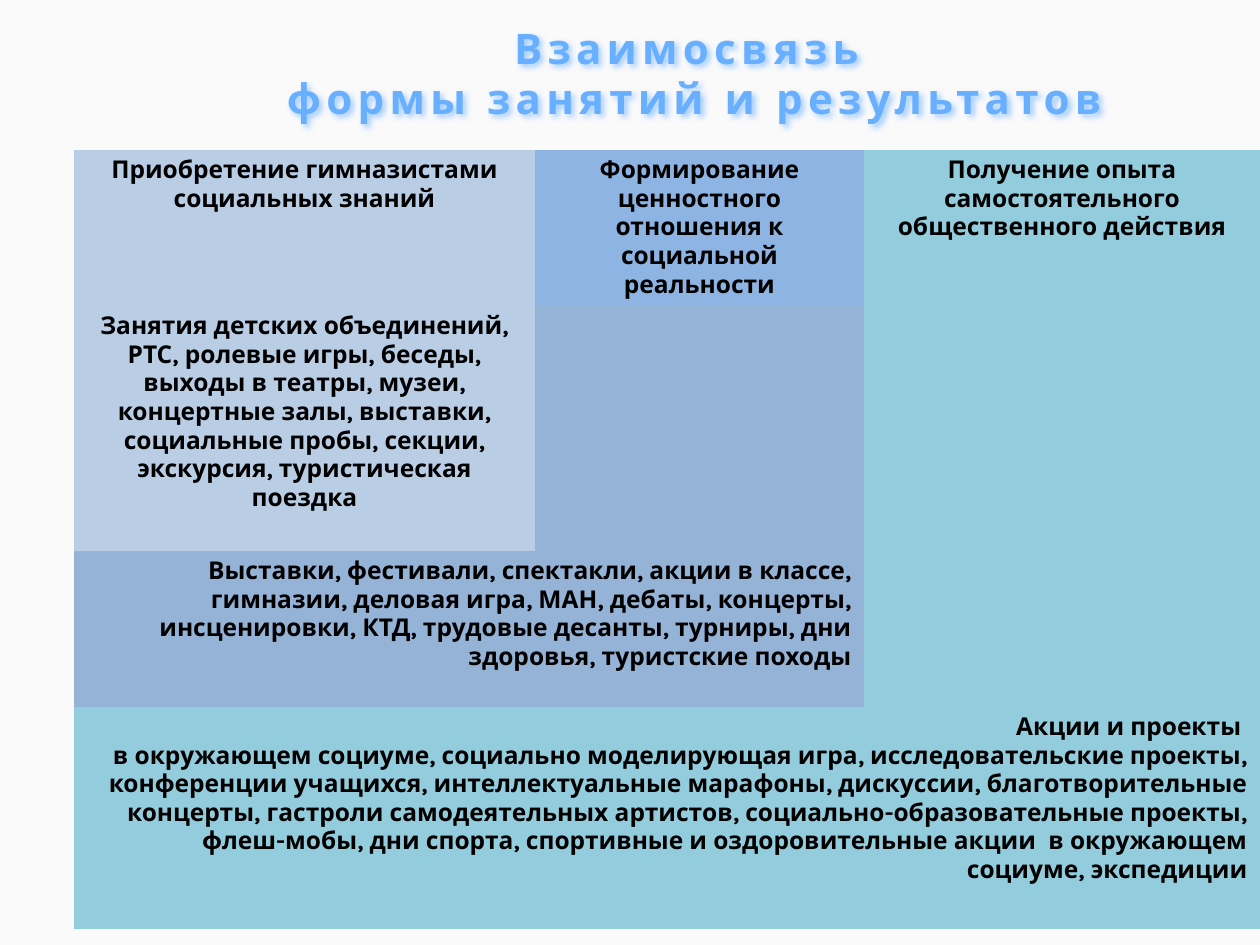
from lxml import etree
from pptx import Presentation
from pptx import util as u
from pptx.dml.color import RGBColor
from pptx.enum import text
from pptx.oxml.ns import qn

PX = 914400 // 126
FONT = "Karla"
COLORS = {
    "page": "FAFAFA",
    "title": "69AFFF",
    "ink": "000000",
    "knowledge": "B9CDE5",
    "values_head": "8EB4E3",
    "values": "95B3D7",
    "action": "93CDDD",
}
CENTER, RIGHT = text.PP_ALIGN.CENTER, text.PP_ALIGN.RIGHT
COLUMNS = [461, 329, 396]
ROWS = [156, 245, 156, 222]
CELLS = [
    (0, 0, 1, 1, "knowledge", CENTER, ["Приобретение гимназистами социальных знаний"]),
    (0, 1, 1, 1, "values_head", CENTER,
     ["Формирование ценностного отношения к социальной реальности"]),
    (0, 2, 1, 1, "action", CENTER,
     ["Получение опыта самостоятельного общественного действия"]),
    (1, 0, 1, 1, "knowledge", CENTER,
     ["Занятия детских объединений,",
      "РТС, ролевые игры, беседы, выходы в театры, музеи, концертные залы, "
      "выставки, социальные пробы, секции, экскурсия, туристическая поездка"]),
    (1, 1, 1, 1, "values", CENTER, []),
    (1, 2, 2, 1, "action", CENTER, []),
    (2, 0, 1, 2, "values", RIGHT,
     ["Выставки, фестивали, спектакли, акции в классе, гимназии, деловая игра, "
      "МАН, дебаты, концерты, инсценировки, КТД, трудовые десанты, турниры, "
      "дни здоровья, туристские походы"]),
    (3, 0, 1, 3, "action", RIGHT,
     ["Акции и проекты ",
      "в окружающем социуме, социально моделирующая игра, исследовательские "
      "проекты, конференции учащихся, интеллектуальные марафоны, дискуссии, "
      "благотворительные концерты, гастроли самодеятельных артистов, "
      "социально-образовательные проекты, флеш-мобы, дни спорта, спортивные и "
      "оздоровительные акции  в окружающем социуме, экспедиции"]),
]


class Slide:
    def __init__(self, deck):
        self.page = deck.slides.add_slide(deck.slide_layouts[6])
        self.fill(self.page.background.fill, "page")

    def fill(self, fill, color):
        fill.solid()
        fill.fore_color.rgb = RGBColor.from_string(COLORS[color])

    def lettering(self, frame, lines, size, color, align, spacing=0):
        frame.text = "\n".join(lines)
        for paragraph in frame.paragraphs:
            paragraph.alignment = align
            for span in paragraph.runs:
                span.font.name = FONT
                span.font.size = u.Pt(size)
                span.font.bold = True
                span.font.color.rgb = RGBColor.from_string(COLORS[color])
                if spacing:
                    span.font._element.set("spc", str(spacing * 100))

    def title(self, left, top, width, height, lines):
        box = self.page.shapes.add_textbox(left * PX, top * PX, width * PX, height * PX)
        box.text_frame.word_wrap = False
        box.text_frame.auto_size = text.MSO_AUTO_SIZE.SHAPE_TO_FIT_TEXT
        self.lettering(box.text_frame, lines, 24, "title", CENTER, spacing=3)
        self.glow(box)

    def glow(self, box):
        effects = etree.SubElement(box._element.spPr, qn("a:effectLst"))
        shadow = etree.SubElement(effects, qn("a:outerShdw"), blurRad=str(6 * PX),
                                  dist=str(3 * PX), dir="2700000")
        color = etree.SubElement(shadow, qn("a:srgbClr"), val=COLORS["title"])
        etree.SubElement(color, qn("a:alpha"), val="60000")

    def table(self, left, top, columns, rows, cells):
        table = self.page.shapes.add_table(
            len(rows), len(columns), left * PX, top * PX,
            sum(columns) * PX, sum(rows) * PX).table
        table.first_row = table.horz_banding = False
        for column, width in zip(table.columns, columns):
            column.width = width * PX
        for row, height in zip(table.rows, rows):
            row.height = height * PX
        style = table._tbl.tblPr.find(qn("a:tableStyleId"))
        style.text = "{2D5ABB26-0587-4C30-8999-92F81FD0307C}"
        for row, column, tall, wide, color, align, lines in cells:
            cell = table.cell(row, column)
            if tall * wide > 1:
                cell.merge(table.cell(row + tall - 1, column + wide - 1))
            for y in range(row, row + tall):
                for x in range(column, column + wide):
                    self.fill(table.cell(y, x).fill, color)
            if lines:
                self.lettering(cell.text_frame, lines, 14, "ink", align)


def main():
    deck = Presentation()
    deck.slide_width, deck.slide_height = u.Inches(10), u.Inches(7.5)
    slide = Slide(deck)
    slide.table(74, 150, COLUMNS, ROWS, CELLS)
    slide.title(273, 16, 843, 115, ["Взаимосвязь ", "формы занятий и результатов"])
    deck.save("out.pptx")


if __name__ == "__main__":
    main()
